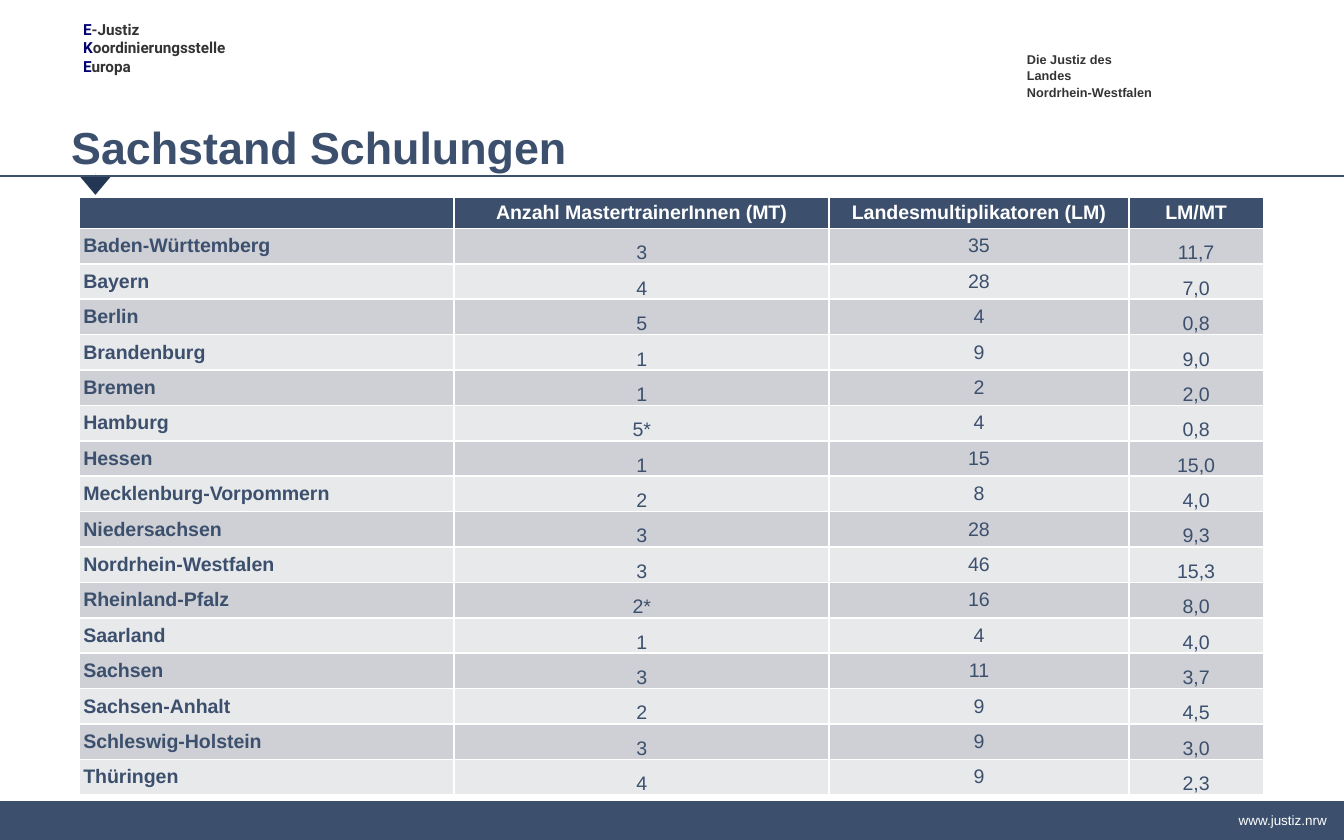
import dataclasses

import lxml.etree
import pptx
import pptx.dml.color
import pptx.enum.shapes
import pptx.enum.text
import pptx.oxml.ns
import pptx.util

Inches = pptx.util.Inches
Pt = pptx.util.Pt
Align = pptx.enum.text.PP_ALIGN
Anchor = pptx.enum.text.MSO_ANCHOR
Shape = pptx.enum.shapes.MSO_SHAPE


@dataclasses.dataclass(frozen=True)
class Theme:
    main: str = "3C506E"
    dark: str = "233755"
    navy: str = "000071"
    gray: str = "333333"
    white: str = "FFFFFF"
    bands: tuple = ("CED0D5", "E8E9EB")
    font: str = "Arial"
    brand: str = "Roboto"
    title: float = 24
    table: float = 10.5
    unit: float = 8.2
    foot: float = 7.2
    land: float = 6.8


def color(code):
    return pptx.dml.color.RGBColor.from_string(code)


class Deck:
    def __init__(self, theme):
        self.theme = theme
        self.file = pptx.Presentation()
        self.file.slide_width = Inches(10)
        self.file.slide_height = Inches(6.25)
        self.slide = self.file.slides.add_slide(self.file.slide_layouts[5])

    def run(self, para, text, size, code, bold=False, font=None):
        run = para.add_run()
        run.text = text
        run.font.name = font or self.theme.font
        run.font.size = Pt(size)
        run.font.bold = bold
        run.font.color.rgb = color(code)

    def inset(self, item, left, top, right, low):
        item.margin_left, item.margin_top = Inches(left), Inches(top)
        item.margin_right, item.margin_bottom = Inches(right), Inches(low)

    def title(self, text, *box):
        shape = self.slide.shapes.title
        shape.left, shape.top, shape.width, shape.height = map(Inches, box)
        frame = shape.text_frame
        frame.auto_size = pptx.enum.text.MSO_AUTO_SIZE.NONE
        frame.vertical_anchor = Anchor.BOTTOM
        self.inset(frame, 0, 0, 0, 0)
        para = frame.paragraphs[0]
        para.alignment = Align.LEFT
        para.line_spacing = 1.14
        self.run(para, text, self.theme.title, self.theme.main, True)

    def text(self, *box, wrap=True):
        frame = self.slide.shapes.add_textbox(*map(Inches, box)).text_frame
        frame.word_wrap = wrap
        return frame

    def shape(self, kind, code, *box):
        shape = self.slide.shapes.add_shape(kind, *map(Inches, box))
        shape.shadow.inherit = False
        shape.fill.solid()
        shape.fill.fore_color.rgb = color(code)
        shape.line.fill.background()
        return shape

    def line(self, code, width, *ends):
        kind = pptx.enum.shapes.MSO_CONNECTOR.STRAIGHT
        line = self.slide.shapes.add_connector(kind, *map(Inches, ends))
        line.line.color.rgb = color(code)
        line.line.width = Pt(width)
        lxml.etree.SubElement(line._element.spPr, pptx.oxml.ns.qn("a:effectLst"))

    def edge(self, cell, sides):
        """Draw thin white borders; they must stand before the cell fill."""
        qn = pptx.oxml.ns.qn
        props = cell._tc.get_or_add_tcPr()
        for spot, side in enumerate(sides):
            line = lxml.etree.Element(qn("a:ln" + side), w=str(Pt(1)))
            fill = lxml.etree.SubElement(line, qn("a:solidFill"))
            lxml.etree.SubElement(fill, qn("a:srgbClr"), val=self.theme.white)
            props.insert(spot, line)

    def cell(self, cell, text, fill, code, bold, align, low):
        cell.fill.solid()
        cell.fill.fore_color.rgb = color(fill)
        cell.vertical_anchor = Anchor.BOTTOM if low else Anchor.MIDDLE
        self.inset(cell, *((0.01, 0.01, 0.01, 0) if low else (0.03, 0, 0.03, 0)))
        para = cell.text_frame.paragraphs[0]
        para.alignment = align
        if text:
            self.run(para, text, self.theme.table, code, bold)
        else:
            # An empty cell needs the small type too, or its row grows
            lxml.etree.SubElement(para._p, pptx.oxml.ns.qn("a:endParaRPr"),
                                  sz=str(int(self.theme.table * 100)))

    def table(self, rows, widths, head, left, top, width, height):
        theme = self.theme
        table = self.slide.shapes.add_table(
            len(rows), len(widths), *map(Inches, (left, top, width, height))).table
        for column, size in zip(table.columns, widths):
            column.width = Inches(size)
        pitch = (height - head) / (len(rows) - 1)
        for y, row in enumerate(rows):
            table.rows[y].height = Inches(pitch if y else head)
            for x, text in enumerate(row):
                cell = table.cell(y, x)
                fill = theme.bands[(y - 1) % 2] if y else theme.main
                self.cell(cell, text, fill,
                          code=theme.main if y else theme.white,
                          bold=y == 0 or x == 0,
                          align=Align.LEFT if y and x == 0 else Align.CENTER,
                          low=y > 0 and x in (1, 3))
                self.edge(cell, "LRTB")


ROWS = [
    ("", "Anzahl MastertrainerInnen (MT)", "Landesmultiplikatoren (LM)", "LM/MT"),
    ("Baden-Württemberg", "3", "35", "11,7"),
    ("Bayern", "4", "28", "7,0"),
    ("Berlin", "5", "4", "0,8"),
    ("Brandenburg", "1", "9", "9,0"),
    ("Bremen", "1", "2", "2,0"),
    ("Hamburg", "5*", "4", "0,8"),
    ("Hessen", "1", "15", "15,0"),
    ("Mecklenburg-Vorpommern", "2", "8", "4,0"),
    ("Niedersachsen", "3", "28", "9,3"),
    ("Nordrhein-Westfalen", "3", "46", "15,3"),
    ("Rheinland-Pfalz", "2*", "16", "8,0"),
    ("Saarland", "1", "4", "4,0"),
    ("Sachsen", "3", "11", "3,7"),
    ("Sachsen-Anhalt", "2", "9", "4,5"),
    ("Schleswig-Holstein", "3", "9", "3,0"),
    ("Thüringen", "4", "9", "2,3"),
]


def main():
    theme = Theme()
    deck = Deck(theme)

    # Header: state name on the right
    frame = deck.text(7.64, 0.37, 0.99, 0.25, wrap=False)
    deck.inset(frame, 0, 0, 0, 0)
    para = frame.paragraphs[0]
    para.line_spacing = Pt(9)
    deck.run(para, "Die Justiz des Landes", theme.land, theme.gray, True)
    para.add_line_break()
    deck.run(para, "Nordrhein-Westfalen", theme.land, theme.gray, True)

    # Header: unit name with marked initials
    frame = deck.text(0.52, 0.1, 1.87, 0.52)
    for spot, word in enumerate(("E-Justiz", "Koordinierungsstelle", "Europa")):
        para = frame.add_paragraph() if spot else frame.paragraphs[0]
        for part, code in ((word[0], theme.navy), (word[1:], theme.gray)):
            deck.run(para, part, theme.unit, code, True, theme.brand)

    # Footer bar with web address
    deck.shape(Shape.RECTANGLE, theme.main, 0, 5.96, 10, 0.29)
    frame = deck.text(8.95, 5.99, 1.02, 0.22)
    frame.vertical_anchor = Anchor.MIDDLE
    para = frame.paragraphs[0]
    para.alignment = Align.RIGHT
    deck.run(para, "www.justiz.nrw", theme.foot, theme.white)

    # Title with rule and pointer
    arrow = deck.shape(Shape.DOWN_ARROW, theme.dark, 0.59, 1.29, 0.24, 0.16)
    arrow.adjustments[0] = 0
    arrow.adjustments[1] = 0.89
    deck.line(theme.main, 1.5, 0, 1.31, 10, 1.31)
    deck.title("Sachstand Schulungen", 0.53, 0.79, 8.15, 0.5)

    # Trainers by state
    deck.table(ROWS, (2.79, 2.79, 2.23, 1), 0.23, 0.59, 1.47, 8.81, 4.45)

    deck.file.save("out.pptx")


if __name__ == "__main__":
    main()
